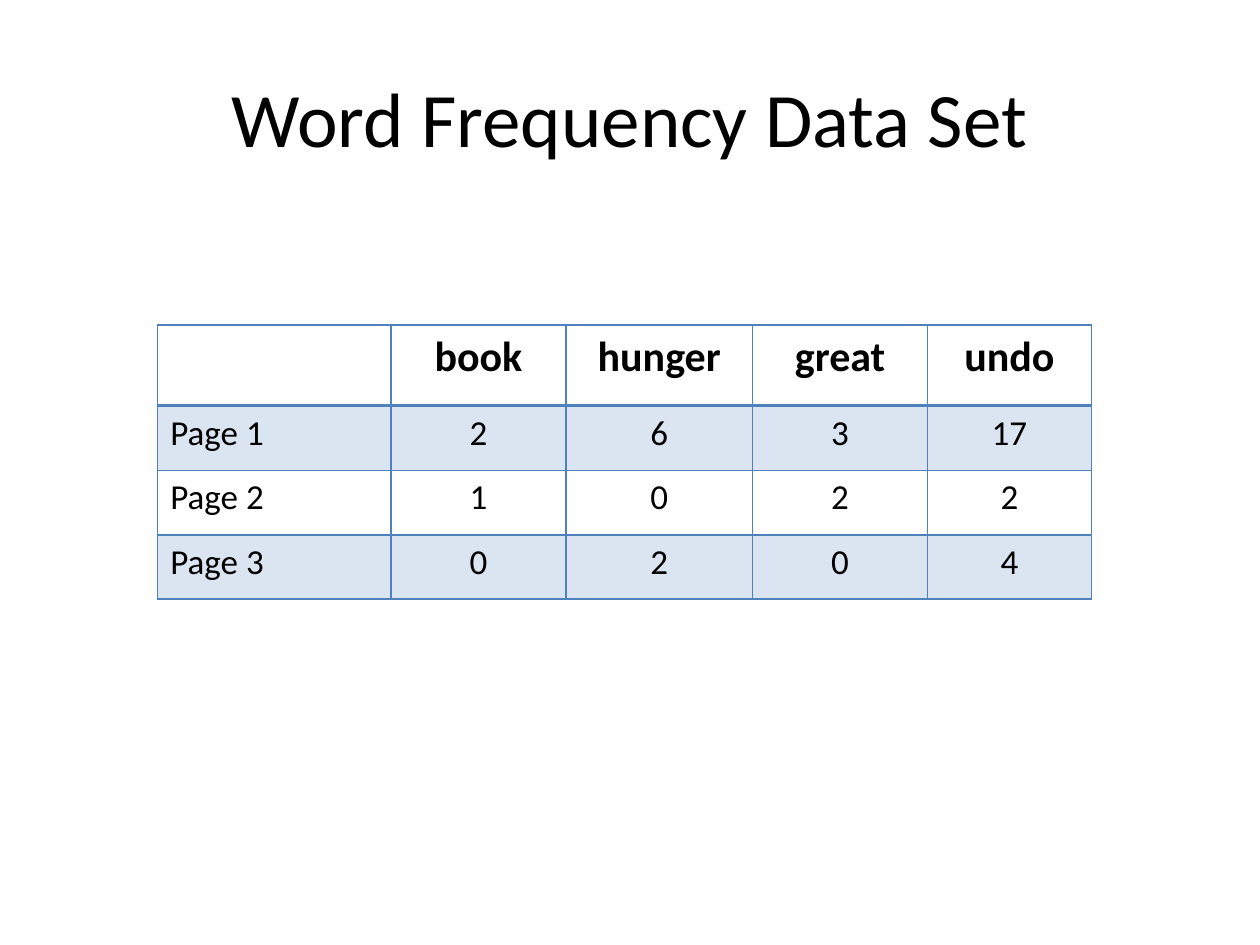
from dataclasses import dataclass

import lxml.etree
import pptx
import pptx.dml.color
import pptx.enum.text
import pptx.oxml.ns
import pptx.util
from pptx.util import Cm

BLACK = pptx.dml.color.RGBColor(0x00, 0x00, 0x00)
BLUE = pptx.dml.color.RGBColor(0x4F, 0x81, 0xBD)
BAND_OPACITY = 20  # percent

ALIGN = pptx.enum.text.PP_ALIGN
ANCHOR = pptx.enum.text.MSO_ANCHOR


@dataclass(frozen=True)
class TextStyle:
    size: float
    bold: bool = False
    alignment: ALIGN = ALIGN.CENTER


@dataclass(frozen=True)
class TableRow:
    texts: tuple[str, ...]
    height: float
    banded: bool = False
    header: bool = False


TITLE_STYLE = TextStyle(44)
HEADER_STYLE = TextStyle(24, bold=True)
LABEL_STYLE = TextStyle(20, alignment=ALIGN.LEFT)
COUNT_STYLE = TextStyle(20)

COLUMN_WIDTHS = (4.7, 3.53, 3.76, 3.53, 3.3)
ROWS = (
    TableRow(("", "book", "hunger", "great", "undo"), 1.63, header=True),
    TableRow(("Page 1", "2", "6", "3", "17"), 1.3, banded=True),
    TableRow(("Page 2", "1", "0", "2", "2"), 1.3),
    TableRow(("Page 3", "0", "2", "0", "4"), 1.3, banded=True),
)


def add_element(parent, tag: str, **attributes: str):
    return lxml.etree.SubElement(parent, pptx.oxml.ns.qn(tag), attributes)


def write_text(text_frame, text: str, style: TextStyle) -> None:
    paragraph = text_frame.paragraphs[0]
    paragraph.alignment = style.alignment
    if not text:
        return
    run = paragraph.add_run()
    run.text = text
    font_format = {
        "name": "Calibri",
        "size": pptx.util.Pt(style.size),
        "bold": style.bold,
    }
    for name, value in font_format.items():
        setattr(run.font, name, value)
    run.font.color.rgb = BLACK


def draw_borders(cell, widths: dict[str, float]) -> None:
    properties = cell._tc.get_or_add_tcPr()
    for side, points in widths.items():
        line = add_element(properties, f"a:{side}", w=str(pptx.util.Pt(points)))
        fill = add_element(line, "a:solidFill")
        add_element(fill, "a:srgbClr", val=str(BLUE))


def fill_cell(cell, banded: bool) -> None:
    if not banded:
        cell.fill.background()
        return
    cell.fill.solid()
    cell.fill.fore_color.rgb = BLUE
    color = cell._tc.tcPr.find("./" + pptx.oxml.ns.qn("a:solidFill"))[0]
    add_element(color, "a:alpha", val=str(BAND_OPACITY * 1000))


def add_title(slide, text: str) -> None:
    shape = slide.shapes.add_textbox(Cm(1.27), Cm(0.76), Cm(22.86), Cm(3.18))
    frame_format = {"word_wrap": True, "vertical_anchor": ANCHOR.MIDDLE}
    for name, value in frame_format.items():
        setattr(shape.text_frame, name, value)
    write_text(shape.text_frame, text, TITLE_STYLE)


def add_frequency_table(slide, rows: tuple[TableRow, ...]) -> None:
    table = slide.shapes.add_table(
        len(rows), len(COLUMN_WIDTHS), Cm(3.18), Cm(6.55),
        Cm(sum(COLUMN_WIDTHS)), Cm(sum(row.height for row in rows)),
    ).table
    for name, value in {"first_row": False, "horz_banding": False}.items():
        setattr(table, name, value)
    for column, width in zip(table.columns, COLUMN_WIDTHS):
        column.width = Cm(width)

    for row_index, row in enumerate(rows):
        table.rows[row_index].height = Cm(row.height)
        # The rule below the header is heavier than the rest of the grid
        below_header = row_index > 0 and rows[row_index - 1].header
        borders = {
            "lnL": 1,
            "lnR": 1,
            "lnT": 2 if below_header else 1,
            "lnB": 2 if row.header else 1,
        }
        for column_index, text in enumerate(row.texts):
            cell = table.cell(row_index, column_index)
            if row.header:
                style = HEADER_STYLE
            else:
                style = COUNT_STYLE if column_index else LABEL_STYLE
            write_text(cell.text_frame, text, style)
            draw_borders(cell, borders)
            fill_cell(cell, row.banded)


def main() -> None:
    presentation = pptx.Presentation()
    presentation.slide_width = Cm(25.4)
    presentation.slide_height = Cm(19.05)
    slide = presentation.slides.add_slide(presentation.slide_layouts[6])

    # Heading
    add_title(slide, "Word Frequency Data Set")

    # Word counts per page
    add_frequency_table(slide, ROWS)

    presentation.save("out.pptx")


if __name__ == "__main__":
    main()
